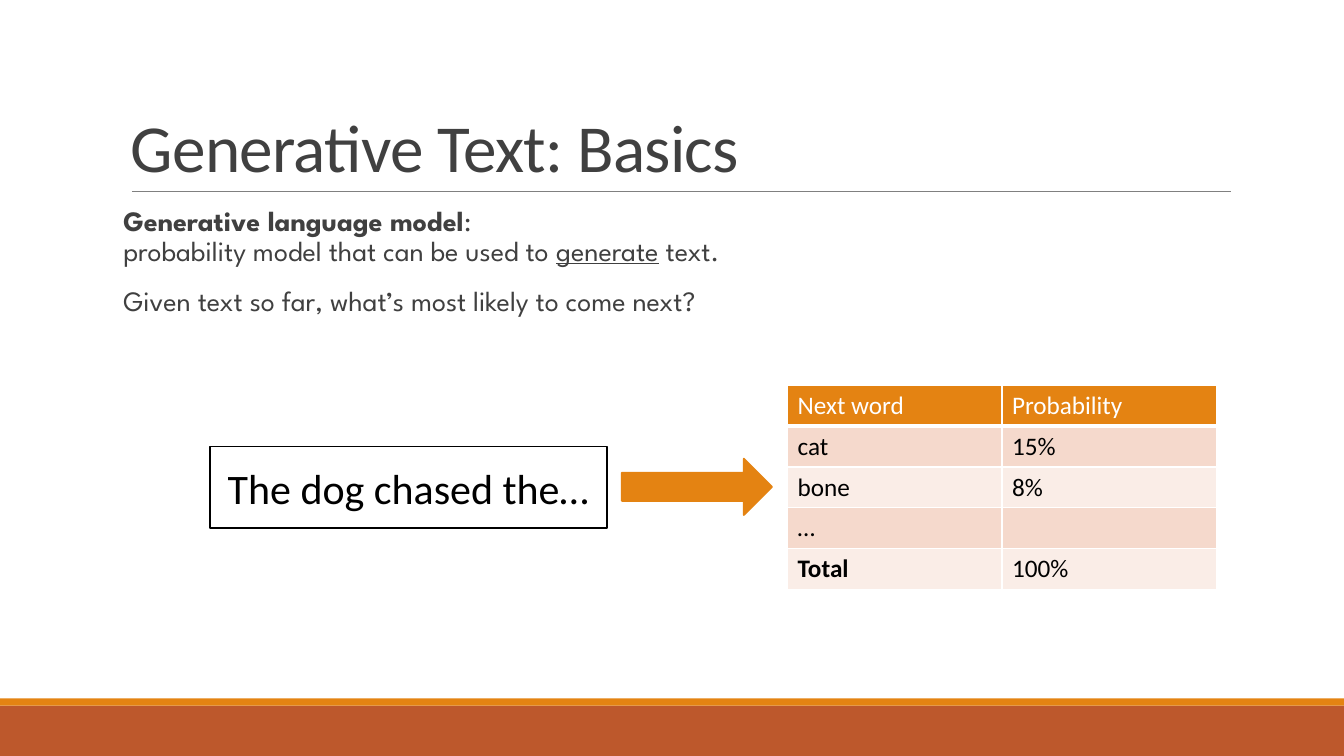
from lxml.etree import SubElement
from pptx import Presentation
from pptx.dml.color import RGBColor
from pptx.enum.shapes import MSO_CONNECTOR as Connector, MSO_SHAPE as Shape
from pptx.enum.text import MSO_ANCHOR as Anchor, PP_ALIGN as Align
from pptx.oxml.ns import qn
from pptx.util import Pt

WHITE = RGBColor(0xFF, 0xFF, 0xFF)
BLACK = RGBColor(0x00, 0x00, 0x00)
CHARCOAL = RGBColor(0x40, 0x40, 0x40)
GREY = RGBColor(0x80, 0x80, 0x80)
ORANGE = RGBColor(0xE4, 0x83, 0x12)
RUST = RGBColor(0xBD, 0x58, 0x2C)
PEACH = RGBColor(0xF5, 0xD9, 0xCC)
PALE_PEACH = RGBColor(0xFA, 0xED, 0xE7)

SLIDE_WIDTH, SLIDE_HEIGHT = 960, 540
ROW_HEIGHT, COLUMN_WIDTH = 29.16, 153.1
PREDICTIONS = [
    ("Next word", "Probability"),
    ("cat", "15%"),
    ("bone", "8%"),
    ("…", ""),
    ("Total", "100%"),
]
DEFINITION = [
    [("Generative language model", "b"), (":", ""), ("\n", ""),
     ("probability model that can be used to ", ""), ("generate", "u"), (" text.", "")],
    [("Given text so far, what’s most likely to come next?", "")],
]


def write_text(frame, paragraphs, size, color, font="Calibri", align=Align.LEFT,
               anchor=Anchor.TOP, line_spacing=None, before=0, after=0, indent=0, tracking=0):
    """Fill a text frame with paragraphs of (text, style) runs, style being b, u or empty."""
    frame.word_wrap = True
    frame.vertical_anchor = anchor
    for index, runs in enumerate(paragraphs):
        paragraph = frame.add_paragraph() if index else frame.paragraphs[0]
        paragraph.alignment = align
        paragraph.line_spacing = line_spacing
        paragraph.space_before, paragraph.space_after = Pt(before), Pt(after)
        paragraph._p.get_or_add_pPr().set("marL", str(Pt(indent)))
        for text, style in runs:
            if text == "\n":
                paragraph.add_line_break()
                continue
            run = paragraph.add_run()
            run.text = text
            run.font.name, run.font.size = font, Pt(size)
            run.font.color.rgb = color
            run.font.bold, run.font.underline = style == "b", style == "u"
            if tracking:
                run._r.get_or_add_rPr().set("spc", str(int(tracking * 100)))


def add_text(slide, box, paragraphs, **text_format):
    """Add a text box."""
    text_box = slide.shapes.add_textbox(*map(Pt, box))
    write_text(text_box.text_frame, paragraphs, **text_format)


def add_block(slide, kind, box, fill, line=None):
    """Add a filled preset shape, outlined if a line colour is given."""
    block = slide.shapes.add_shape(kind, *map(Pt, box))
    block.shadow.inherit = False
    block.fill.solid()
    block.fill.fore_color.rgb = fill
    if line is None:
        block.line.fill.background()
    else:
        block.line.color.rgb = line
        block.line.width = Pt(1.25)
    return block


def add_rule(slide, left, right, top):
    """Add the thin line under the title."""
    rule = slide.shapes.add_connector(Connector.STRAIGHT, Pt(left), Pt(top), Pt(right), Pt(top))
    rule.line.color.rgb = GREY
    rule.line.width = Pt(0.5)
    SubElement(rule._element.spPr, qn("a:effectLst"))


def set_borders(cell, bottom):
    """Give a cell white borders, with its own bottom width."""
    properties = cell._tc.get_or_add_tcPr()
    for side, width in (("L", 1), ("R", 1), ("T", 1), ("B", bottom)):
        border = SubElement(properties, qn(f"a:ln{side}"), w=str(Pt(width)))
        fill = SubElement(border, qn("a:solidFill"))
        SubElement(fill, qn("a:srgbClr"), val=str(WHITE))


def add_predictions(slide, left, top):
    """Add the table of next words and their probabilities."""
    rows, columns = len(PREDICTIONS), len(PREDICTIONS[0])
    table = slide.shapes.add_table(rows, columns, Pt(left), Pt(top), Pt(columns * COLUMN_WIDTH),
                                   Pt(rows * ROW_HEIGHT)).table
    for column in table.columns:
        column.width = Pt(COLUMN_WIDTH)
    for index, words in enumerate(PREDICTIONS):
        table.rows[index].height = Pt(ROW_HEIGHT)
        header = index == 0
        for column, word in enumerate(words):
            cell = table.cell(index, column)
            set_borders(cell, bottom=3 if header else 1)
            cell.fill.solid()
            cell.fill.fore_color.rgb = ORANGE if header else (PALE_PEACH, PEACH)[index % 2]
            runs = [(word, "b" if word == "Total" else "")] if word else []
            write_text(cell.text_frame, [runs], size=18, color=WHITE if header else BLACK)


def main():
    """Build and save the slide."""
    deck = Presentation()
    deck.slide_width, deck.slide_height = Pt(SLIDE_WIDTH), Pt(SLIDE_HEIGHT)
    slide = deck.slides.add_slide(deck.slide_layouts[6])

    add_block(slide, Shape.RECTANGLE, (0, 504, SLIDE_WIDTH, 36), RUST)
    add_block(slide, Shape.RECTANGLE, (0, 498.8, SLIDE_WIDTH, 5.2), ORANGE)
    add_rule(slide, 94.3, 879, 136.8)
    add_text(slide, (86.4, 22.3, 792, 114.5), [[("Generative Text: Basics", "")]], size=48,
             color=CHARCOAL, anchor=Anchor.BOTTOM, line_spacing=0.85, tracking=-0.5)
    add_text(slide, (54, 144.7, 864, 352), DEFINITION, size=20, color=CHARCOAL,
             font="League Spartan", line_spacing=0.9, before=12, after=2, indent=27)

    prompt = add_block(slide, Shape.RECTANGLE, (149.8, 319, 283.7, 58.3), WHITE, BLACK)
    write_text(prompt.text_frame, [[("The dog chased the…", "")]], size=30, color=BLACK,
               align=Align.CENTER, anchor=Anchor.MIDDLE)
    add_block(slide, Shape.RIGHT_ARROW, (444.2, 327.6, 107.3, 40.3), ORANGE, ORANGE)
    add_predictions(slide, 562.6, 275.3)

    deck.save("out.pptx")


if __name__ == "__main__":
    main()
